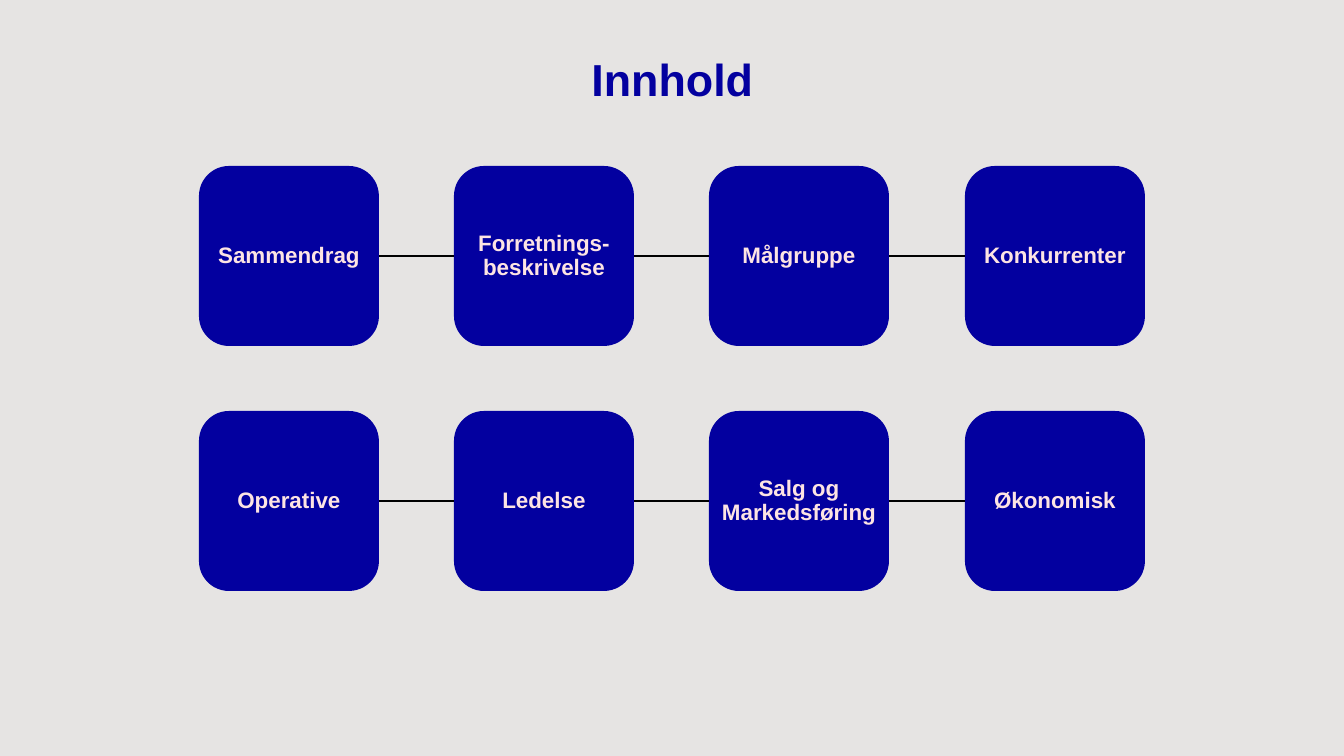
from dataclasses import dataclass

from lxml.etree import SubElement
from pptx import Presentation
from pptx.dml.color import RGBColor
from pptx.enum.shapes import MSO_CONNECTOR, MSO_SHAPE
from pptx.enum.text import MSO_ANCHOR, MSO_AUTO_SIZE, PP_ALIGN
from pptx.oxml.ns import qn
from pptx.shapes.autoshape import Shape
from pptx.slide import Slide
from pptx.text.text import TextFrame
from pptx.util import Emu, Pt

NAVY = RGBColor(0x03, 0x00, 0x9F)
BLUSH = RGBColor(0xFD, 0xE4, 0xE3)
STONE = RGBColor(0xE6, 0xE4, 0xE3)
BLACK = RGBColor(0x00, 0x00, 0x00)

FONT = "Arial"
TITLE_ONLY = 5
LEFT_SIDE, RIGHT_SIDE = 1, 3

SLIDE_WIDTH, SLIDE_HEIGHT = 1344, 756
CARD_SIZE = 180
FIRST_LEFT, LAST_LEFT = 199, 965
FIRST_TOP, ROW_PITCH = 166, 245

TOPICS = (
    ("Sammendrag", "Forretnings-beskrivelse", "Målgruppe", "Konkurrenter"),
    ("Operative", "Ledelse", "Salg og Markedsføring", "Økonomisk"),
)


@dataclass(frozen=True)
class Card:
    label: str
    left: int
    top: int


def px(length: int) -> Emu:
    """Turn pixels, 100.8 to the inch, into EMU."""
    return Emu(round(length * 914400 / 100.8))


def write_centred(frame: TextFrame, text: str, size: int, color: RGBColor) -> None:
    para = frame.paragraphs[0]
    para.alignment = PP_ALIGN.CENTER
    para.line_spacing = 0.9
    span = para.add_run()
    span.text = text
    span.font.name = FONT
    span.font.size = Pt(size)
    span.font.bold = True
    span.font.color.rgb = color


def format_title(title: Shape) -> None:
    title.left, title.top = px(581), px(53)
    title.width, title.height = px(183), px(59)
    frame = title.text_frame
    frame.word_wrap = False
    frame.auto_size = MSO_AUTO_SIZE.SHAPE_TO_FIT_TEXT
    frame.vertical_anchor = MSO_ANCHOR.TOP
    write_centred(frame, "Innhold", 32, NAVY)


def add_card(page: Slide, card: Card) -> Shape:
    box = page.shapes.add_shape(
        MSO_SHAPE.ROUNDED_RECTANGLE,
        px(card.left), px(card.top), px(CARD_SIZE), px(CARD_SIZE),
    )
    box.shadow.inherit = False
    box.fill.solid()
    box.fill.fore_color.rgb = NAVY
    box.line.fill.background()
    frame = box.text_frame
    frame.word_wrap = True
    frame.vertical_anchor = MSO_ANCHOR.MIDDLE
    frame.margin_left = frame.margin_right = 0
    write_centred(frame, card.label, 16, BLUSH)
    return box


def link_cards(page: Slide, right_box: Shape, left_box: Shape) -> None:
    link = page.shapes.add_connector(MSO_CONNECTOR.STRAIGHT, 0, 0, 0, 0)
    link.begin_connect(right_box, LEFT_SIDE)
    link.end_connect(left_box, RIGHT_SIDE)
    link.line.color.rgb = BLACK
    link.line.width = Pt(1)
    SubElement(link._element.spPr, qn("a:effectLst"))


def main() -> None:
    deck = Presentation()
    deck.slide_width, deck.slide_height = px(SLIDE_WIDTH), px(SLIDE_HEIGHT)
    page = deck.slides.add_slide(deck.slide_layouts[TITLE_ONLY])
    page.background.fill.solid()
    page.background.fill.fore_color.rgb = STONE
    format_title(page.shapes.title)

    for row, labels in enumerate(TOPICS):
        boxes = []
        for column, label in enumerate(labels):
            left = FIRST_LEFT + (LAST_LEFT - FIRST_LEFT) * column // (len(labels) - 1)
            boxes.append(add_card(page, Card(label, left, FIRST_TOP + ROW_PITCH * row)))
        for left_box, right_box in zip(boxes, boxes[1:]):
            link_cards(page, right_box, left_box)

    deck.save("out.pptx")


if __name__ == "__main__":
    main()
